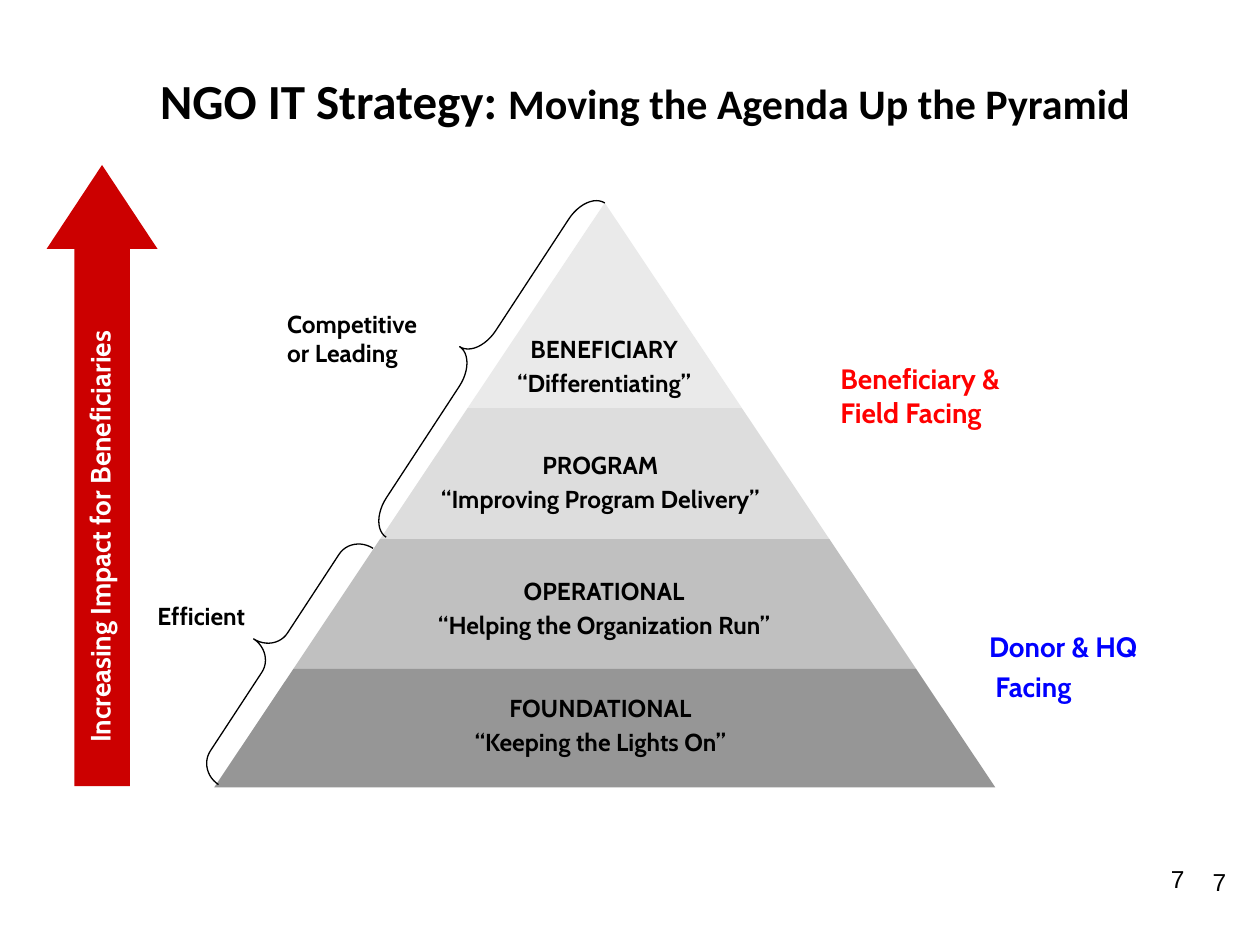
"""Build the NGO IT strategy pyramid slide."""
from pptx import Presentation
from pptx.dml.color import RGBColor
from pptx.enum import shapes, text
from pptx.util import Inches, Pt

COLORS = {
    "black": "000000", "white": "FFFFFF", "arrow": "CC0000",
    "field": "FF0000", "donor": "0000FF",
    "beneficiary": "EAEAEA", "program": "DDDDDD",
    "operational": "C0C0C0", "foundational": "969696",
}
TIERS = [
    ("beneficiary", 0, 1.63, "BENEFICIARY\n“Differentiating”", 4.8, 2.65),
    ("program", 1.63, 2.67, "PROGRAM\n“Improving Program Delivery”", 4.77, 3.57),
    ("operational", 2.67, 3.7, "OPERATIONAL\n“Helping the Organization Run”", 4.8, 4.57),
    ("foundational", 3.7, 4.64, "FOUNDATIONAL\n“Keeping the Lights On”", 4.77, 5.5),
]


def rgb(name):
    return RGBColor.from_string(COLORS[name])


def style(font, name, size, color, bold=True):
    font.name, font.size, font.bold = name, Pt(size), bold
    font.color.rgb = rgb(color)


def add_label(s, box, words, size=14, color="black", align=text.PP_ALIGN.LEFT, wrap=True):
    sp = s.shapes.add_textbox(*map(Inches, box))
    tf = sp.text_frame
    tf.margin_left = tf.margin_right = tf.margin_top = tf.margin_bottom = 0
    tf.word_wrap = wrap
    tf.text = words
    for i, p in enumerate(tf.paragraphs):
        p.alignment = align
        if i:
            p.space_before = Pt(round(size * 0.2, 1))
        for r in p.runs:
            style(r.font, "Cabin", size, color)
    return sp


def add_title(s, box):
    tf = s.shapes.add_textbox(*map(Inches, box)).text_frame
    tf.word_wrap = True
    tf.vertical_anchor = text.MSO_ANCHOR.BOTTOM
    p = tf.paragraphs[0]
    p.alignment = text.PP_ALIGN.CENTER
    for words, size in (("NGO IT Strategy: ", 28), ("Moving the Agenda Up the Pyramid", 24)):
        r = p.add_run()
        r.text = words
        style(r.font, "Calibri", size, "black")


def add_impact_arrow(s, box):
    x, y, w, h = box
    sp = s.shapes.add_shape(shapes.MSO_SHAPE.UP_ARROW, *map(Inches, box))
    sp.shadow.inherit = False
    sp.adjustments[0], sp.adjustments[1] = 0.501, 0.757
    sp.fill.solid()
    sp.fill.fore_color.rgb = rgb("arrow")
    sp.line.fill.background()
    length, height = 3.98, 0.27
    label = (x + w / 2 - length / 2 - 0.02, y + h / 2 + 0.13 - height / 2, length, height)
    sp = add_label(s, label, "Increasing Impact for Beneficiaries", 16, "white")
    sp.rotation = 270


def add_pyramid(s, box):
    x, y, w, h = box
    mid, slope = x + w / 2, w / 2 / h
    for color, top, bottom, words, center, label_top in TIERS:
        a, b = top * slope, bottom * slope
        points = [(mid - a, y + top), (mid + a, y + top),
                  (mid + b, y + bottom), (mid - b, y + bottom)]
        points = [(Inches(px), Inches(py)) for px, py in points]
        builder = s.shapes.build_freeform(*points[0])
        builder.add_line_segments(points[1:], close=True)
        sp = builder.convert_to_shape()
        sp.shadow.inherit = False
        sp.fill.solid()
        sp.fill.fore_color.rgb = rgb(color)
        sp.line.fill.background()
        add_label(s, (center - 1.48, label_top, 2.95, 0.52), words,
                  align=text.PP_ALIGN.CENTER)


def add_brace(s, box, curve):
    sp = s.shapes.add_shape(shapes.MSO_SHAPE.LEFT_BRACE, *map(Inches, box))
    sp.shadow.inherit = False
    sp.rotation = 33.2
    sp.adjustments[0], sp.adjustments[1] = curve, 0.5
    sp.fill.background()
    sp.line.color.rgb = rgb("black")
    sp.line.width = Pt(0.75)


def add_page_number(s, box):
    tf = s.shapes.add_textbox(*map(Inches, box)).text_frame
    tf.word_wrap = True
    tf.text = "7"
    p = tf.paragraphs[0]
    p.alignment = text.PP_ALIGN.RIGHT
    style(p.runs[0].font, "Arial", 14, "black", False)


def main():
    prs = Presentation()
    prs.slide_width, prs.slide_height = Inches(10), Inches(7.5)
    s = prs.slides.add_slide(prs.slide_layouts[6])
    add_title(s, (0.08, 0.08, 10.08, 1))
    add_impact_arrow(s, (0.37, 1.31, 0.88, 4.93))
    add_pyramid(s, (1.7, 1.61, 6.2, 4.64))
    add_brace(s, (3.62, 1.26, 0.34, 3.17), 0.776)
    add_brace(s, (1.98, 4.06, 0.4, 2.24), 0.466)
    add_label(s, (1.25, 4.77, 0.77, 0.24), "Efficient", wrap=False)
    add_label(s, (2.28, 2.45, 1.33, 0.47), "Competitive \vor Leading")
    add_label(s, (7.85, 5, 1.57, 0.59), "Donor & HQ\n Facing", 16, "donor")
    add_label(s, (6.67, 2.87, 1.75, 0.54), "Beneficiary & Field Facing", 16, "field")
    add_page_number(s, (6.33, 6.81, 3.17, 0.52))
    add_page_number(s, (8.5, 6.83, 1.33, 0.52))
    prs.save("out.pptx")


if __name__ == "__main__":
    main()
